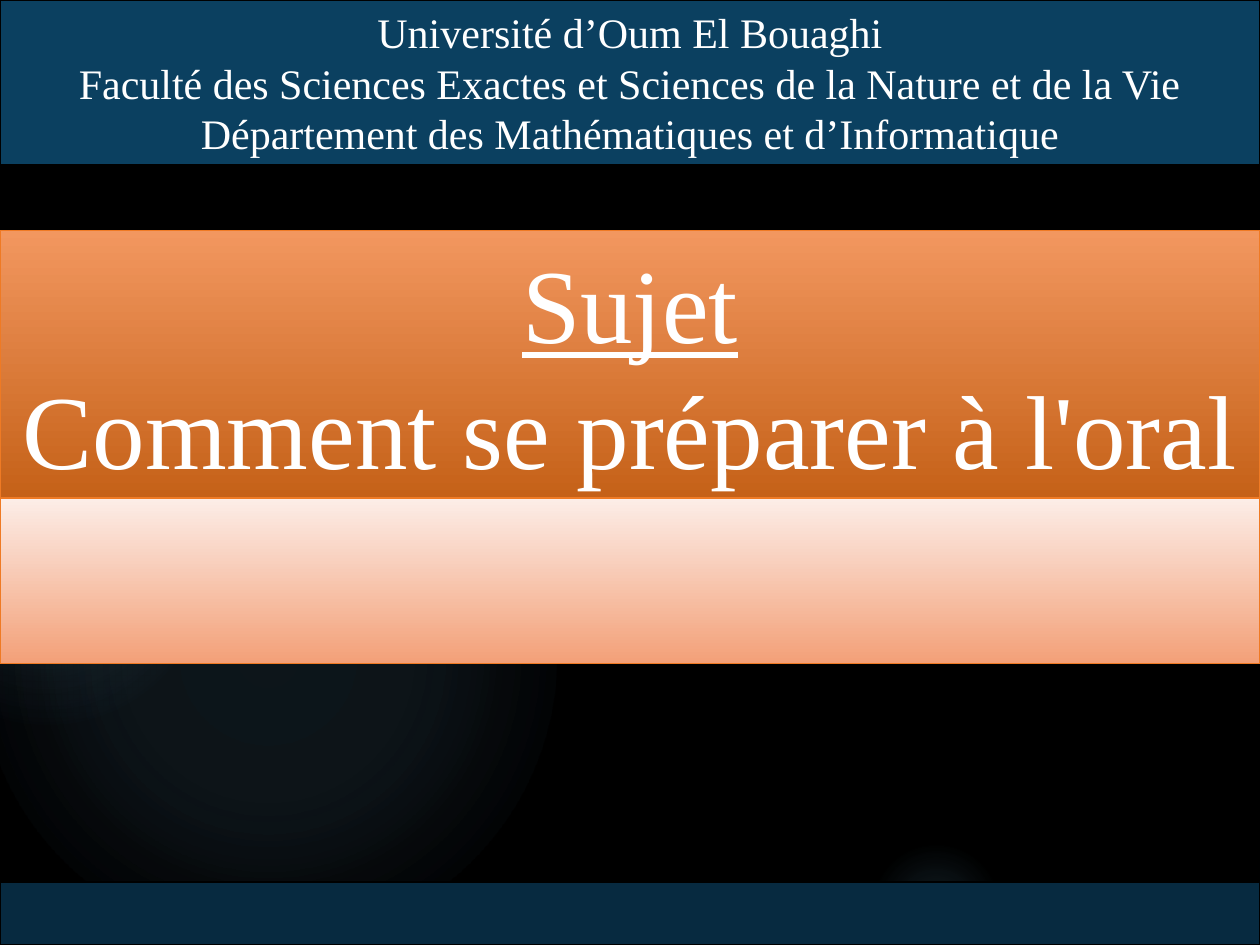
from lxml.etree import SubElement as Sub
from pptx import Presentation
from pptx.dml.color import RGBColor
from pptx.enum.shapes import MSO_SHAPE as Kind
from pptx.enum.text import MSO_ANCHOR as Anchor, MSO_AUTO_SIZE as Fit, PP_ALIGN as Align
from pptx.oxml.ns import qn
from pptx.util import Pt

WIDE, HIGH = 720, 540


def color(code):
    return RGBColor.from_string(code)


class Deck:
    font = "Times New Roman"
    ink = "FFFFFF"
    glow_ink = "7AC4F0"

    def __init__(self, slide):
        self.slide = slide
        self.shapes = slide.shapes

    def place(self, shape, left, top, width, height):
        box = {"left": left, "top": top, "width": width, "height": height}
        for name, value in box.items():
            setattr(shape, name, Pt(value))

    def paint(self, shape, fill, line):
        """Fill with one colour, or with a top-to-bottom pair."""
        if isinstance(fill, str):
            shape.fill.solid()
            shape.fill.fore_color.rgb = color(fill)
        else:
            shape.fill.gradient()
            shape.fill.gradient_angle = 270
            for stop, code in zip(shape.fill.gradient_stops, fill):
                stop.color.rgb = color(code)
        shape.line.color.rgb = color(line)
        shape.line.width = Pt(0.75)

    def band(self, top, height, fill, line):
        shape = self.shapes.add_shape(Kind.RECTANGLE, 0, Pt(top), Pt(WIDE), Pt(height))
        shape.shadow.inherit = False
        self.paint(shape, fill, line)
        return shape

    def title(self, top, height, fill, line):
        shape = self.shapes.title
        self.place(shape, 0, top, WIDE, height)
        self.paint(shape, fill, line)
        # Bring the title in front of the glows
        self.shapes._spTree.append(shape._element)
        return shape

    def text(self, shape, lines, size):
        frame = shape.text_frame
        style = {"word_wrap": True, "auto_size": Fit.NONE,
                 "vertical_anchor": Anchor.MIDDLE}
        for name, value in style.items():
            setattr(frame, name, value)
        frame.text = "\n".join(lines)
        for para in frame.paragraphs:
            para.alignment = Align.CENTER
            font = para.runs[0].font
            for name, value in {"name": self.font, "size": Pt(size)}.items():
                setattr(font, name, value)
            font.color.rgb = color(self.ink)

    def glow(self, left, top, size, stops):
        """Round glow; stops are (position, opacity) in percent."""
        shape = self.shapes.add_shape(Kind.OVAL, Pt(left), Pt(top), Pt(size), Pt(size))
        shape.shadow.inherit = False
        shape.line.fill.background()
        shape.fill.gradient()
        grad = shape._element.spPr.find(qn("a:gradFill"))
        for child in list(grad):
            grad.remove(child)
        items = Sub(grad, qn("a:gsLst"))
        for spot, alpha in stops:
            stop = Sub(items, qn("a:gs"), pos=str(spot * 1000))
            tint = Sub(stop, qn("a:srgbClr"), val=self.glow_ink)
            Sub(tint, qn("a:alpha"), val=str(alpha * 1000))
        ring = Sub(grad, qn("a:path"), path="circle")
        Sub(ring, qn("a:fillToRect"), {side: "50000" for side in "ltrb"})


def main():
    deck = Presentation()
    deck.slide_width, deck.slide_height = Pt(WIDE), Pt(HIGH)
    slide = deck.slides.add_slide(deck.slide_layouts[5])
    slide.background.fill.solid()
    slide.background.fill.fore_color.rgb = color("000000")
    page = Deck(slide)

    # Background glows
    page.glow(496, 480, 78, [(0, 14), (36, 7), (66, 0)])
    page.glow(-12, 210, 330, [(0, 11), (36, 10), (75, 0)])
    page.glow(-66, 228, 186, [(0, 8), (36, 8), (72, 0)])

    # Subject and the pale band below it
    subject = page.title(131.8, 152.6, ("F2975F", "C56118"), "EF7A24")
    page.text(subject, ["Sujet", "Comment se préparer à l'oral"], 60)
    subject.text_frame.paragraphs[0].runs[0].font.underline = True
    page.band(285, 94.3, ("FCEDE7", "F3A078"), "EF7A24")

    # Header and footer
    header = page.band(0, 94.3, "0B4060", "000000")
    page.text(header, [
        "Université d’Oum El Bouaghi",
        "Faculté des Sciences Exactes et Sciences de la Nature et de la Vie",
        "Département des Mathématiques et d’Informatique",
    ], 24)
    page.band(504, 36, "072A40", "000000")

    deck.save("out.pptx")


if __name__ == "__main__":
    main()
